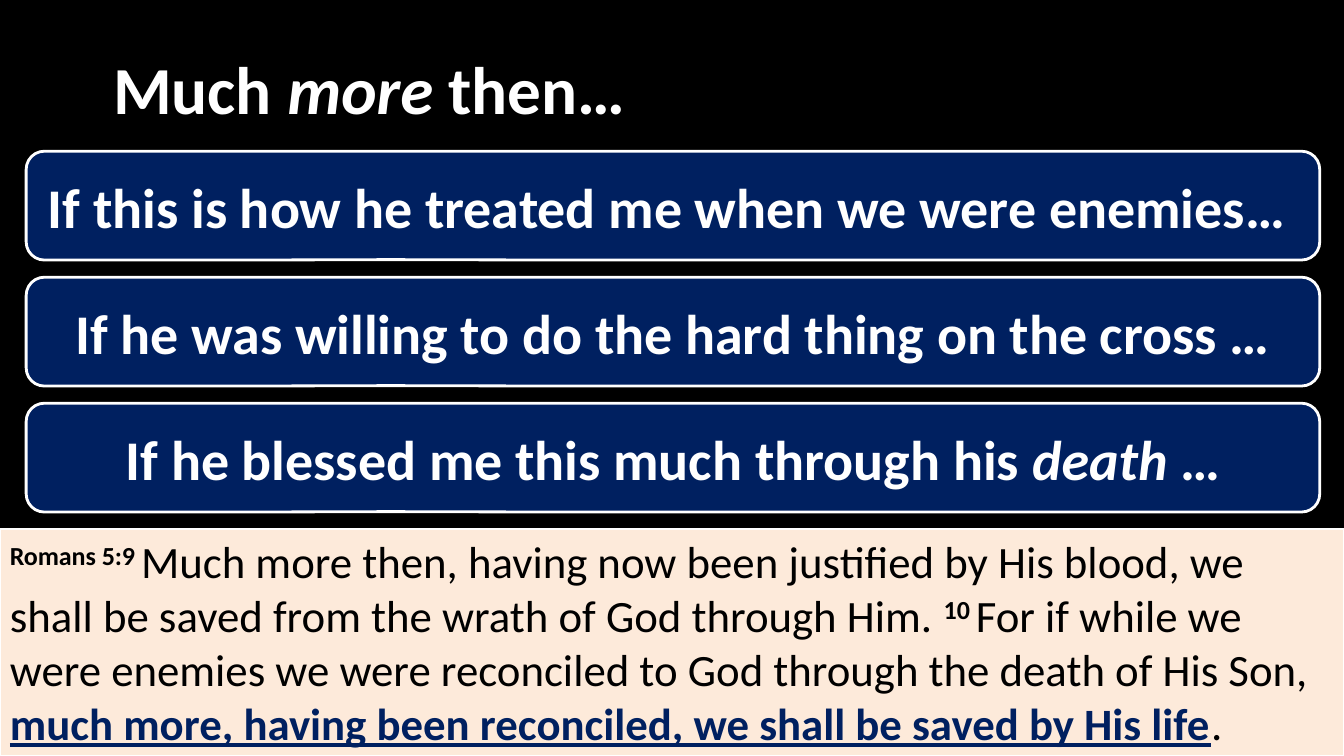
from pptx import Presentation
from pptx import util as u
from pptx.dml import color
from pptx.enum import shapes, text

WHITE, BLACK, NAVY, PEACH = "FFFFFF", "000000", "002060", "FDEADA"
CALLOUT = shapes.MSO_SHAPE.ROUNDED_RECTANGULAR_CALLOUT


def paint(target, hex_color):
    if hex_color is None:
        target.background()
    else:
        target.solid()
        target.fore_color.rgb = color.RGBColor.from_string(hex_color)


def add_box(kind, place, fill, line, line_width, anchor, align, base, runs):
    shape = slide.shapes.add_shape(kind, *[u.Inches(length) for length in place])
    shape.shadow.inherit = False
    paint(shape.fill, fill)
    paint(shape.line.fill, line)
    if line:
        shape.line.width = u.Pt(line_width)
    if kind == CALLOUT:
        for index, value in enumerate((-0.219, 0.496, 0.167)):
            shape.adjustments[index] = value
    frame = shape.text_frame
    frame.word_wrap = True
    frame.vertical_anchor = anchor
    paragraph = frame.paragraphs[0]
    paragraph.alignment = align
    for words, changes in runs:
        run = paragraph.add_run()
        run.text = words
        values = {"name": "Calibri", **base, **changes}
        paint(run.font.fill, values.pop("color"))
        if values.pop("raised", False):
            run._r.get_or_add_rPr().set("baseline", "30000")
        for name, value in values.items():
            setattr(run.font, name, value)


presentation = Presentation()
presentation.slide_width = u.Inches(13.33)
presentation.slide_height = u.Inches(7.5)
slide = presentation.slides.add_slide(presentation.slide_layouts[6])
paint(slide.background.fill, BLACK)

verse_number = {"bold": True, "raised": True}
passage = [
    ("Romans 5:9 ", verse_number),
    ("Much more then, having now been justified by His blood, we shall be saved from "
     "the wrath of God through Him. ", {}),
    ("10 ", verse_number),
    ("For if while we were enemies we were reconciled to God through the death of His Son, ", {}),
    ("much more, having been reconciled, we shall be saved by His life",
     {"color": NAVY, "bold": True, "underline": True}),
    (". ", {}),
]
add_box(shapes.MSO_SHAPE.RECTANGLE, (0, 5.25, 13.33, 2.25), PEACH, WHITE, 1.5,
        text.MSO_ANCHOR.TOP, text.PP_ALIGN.LEFT,
        {"size": u.Pt(32), "color": BLACK, "bold": False}, passage)

italic = {"italic": True}
title = [("Much ", {}), ("more", italic), (" then…", {})]
add_box(CALLOUT, (0.25, 0.33, 6.83, 1.08), None, None, 0,
        text.MSO_ANCHOR.MIDDLE, text.PP_ALIGN.CENTER,
        {"size": u.Pt(48), "color": WHITE, "bold": True}, title)

reasons = [
    [("If this is how he treated me when we were enemies… ", {})],
    [("If he was willing to do the hard thing on the cross …", {})],
    [("If he blessed me this much through his ", {}), ("death", italic), (" …", {})],
]
for row, reason in enumerate(reasons):
    add_box(CALLOUT, (0.26, 1.5 + 1.25 * row, 12.83, 1.08), NAVY, WHITE, 2,
            text.MSO_ANCHOR.MIDDLE, text.PP_ALIGN.CENTER,
            {"size": u.Pt(40), "color": WHITE, "bold": True}, reason)

presentation.save("out.pptx")
